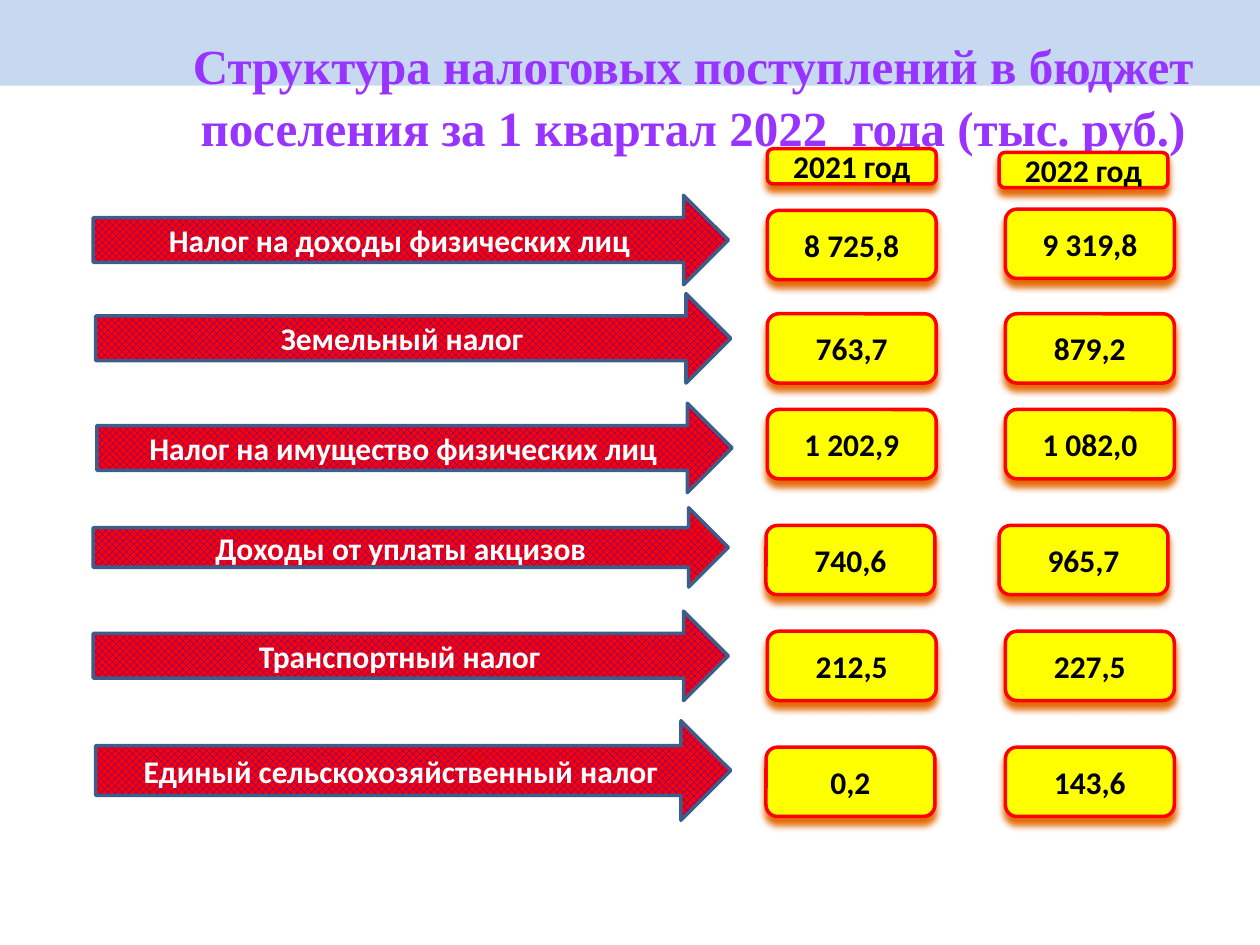
from lxml import etree
from pptx import Presentation
from pptx import util as u
from pptx.dml import color
from pptx.enum import dml, shapes, text
from pptx.oxml import ns

WIDE, HIGH = 10, 7.5
YEARS = [("2021 год", 6.09, 1.18), ("2022 год", 7.93, 1.21)]
BOX_W, BOX_H, HEAD_H = 1.34, 0.55, 0.28
ARROW_W = 5.04
ROWS = [
    ("Налог на доходы физических лиц", (0.74, 1.55, 0.71),
     ("8 725,8", 6.09, 1.67), ("9 319,8", 7.98, 1.66)),
    ("Земельный налог", (0.76, 2.33, 0.71),
     ("763,7", 6.09, 2.49), ("879,2", 7.98, 2.49)),
    ("Налог на имущество физических лиц", (0.77, 3.2, 0.71),
     ("1 202,9", 6.09, 3.25), ("1 082,0", 7.98, 3.25)),
    ("Доходы от уплаты акцизов", (0.74, 4.03, 0.63),
     ("740,6", 6.08, 4.17), ("965,7", 7.93, 4.17)),
    ("Транспортный налог", (0.74, 4.85, 0.71),
     ("212,5", 6.09, 5.01), ("227,5", 7.98, 5.01)),
    ("Единый сельскохозяйственный налог", (0.76, 5.72, 0.79),
     ("0,2", 6.08, 5.93), ("143,6", 7.98, 5.93)),
]


def tint(code):
    return color.RGBColor.from_string(code)


def write(shape, words, size, face, code):
    shape.text_frame.text = words
    shape.text_frame.word_wrap = True
    para = shape.text_frame.paragraphs[0]
    para.alignment = text.PP_ALIGN.CENTER
    font = para.font
    font.size, font.name, font.bold = u.Pt(size), face, True
    font.color.rgb = tint(code)
    return para


def block(slide, kind, x, y, w, h, line=None):
    shape = slide.shapes.add_shape(kind, *map(u.Inches, (x, y, w, h)))
    shape.shadow.inherit = False
    if line:
        shape.line.color.rgb = tint(line)
        shape.line.width = u.Pt(2)
    else:
        shape.line.fill.background()
    return shape


def paint(shape, code):
    shape.fill.solid()
    shape.fill.fore_color.rgb = tint(code)


def label(shape, words, code):
    write(shape, words, 18, "Calibri", code)
    shape.text_frame.vertical_anchor = text.MSO_ANCHOR.MIDDLE


def glow(shape, code):
    effects = shape.element.spPr.find(ns.qn("a:effectLst"))
    shadow = etree.SubElement(
        effects, ns.qn("a:outerShdw"), blurRad=str(u.Pt(4)),
        dist=str(u.Pt(4)), dir="5400000", rotWithShape="0")
    etree.SubElement(shadow, ns.qn("a:srgbClr"), val=code)


def arrow(slide, words, x, y, h):
    shape = block(slide, shapes.MSO_SHAPE.RIGHT_ARROW, x, y, ARROW_W, h, "3A5F8C")
    shape.fill.patterned()
    shape.fill.pattern = dml.MSO_PATTERN.OUTLINED_DIAMOND
    shape.fill.fore_color.rgb = tint("0000FF")
    shape.fill.back_color.rgb = tint("FF0000")
    label(shape, words, "FFFFFF")


def box(slide, words, x, y, h=BOX_H):
    shape = block(slide, shapes.MSO_SHAPE.ROUNDED_RECTANGLE, x, y, BOX_W, h, "FF0000")
    paint(shape, "FFFF00")
    glow(shape, "E46C0A")
    label(shape, words, "000000")


def head(slide):
    title = slide.shapes.title
    title.left, title.top = u.Inches(1), u.Inches(0.21)
    title.width, title.height = u.Inches(9), u.Inches(1.25)
    para = write(title, "Структура налоговых поступлений в бюджет "
                 "поселения за 1 квартал 2022  года (тыс. руб.)",
                 28, "Times New Roman", "9933FF")
    para.line_spacing = 1.05
    title.text_frame.vertical_anchor = text.MSO_ANCHOR.TOP
    band = block(slide, shapes.MSO_SHAPE.RECTANGLE, 0, 0, WIDE, 0.68)
    paint(band, "C6D9F1")
    title.element.addprevious(band.element)


def main():
    deck = Presentation()
    deck.slide_width, deck.slide_height = u.Inches(WIDE), u.Inches(HIGH)
    slide = deck.slides.add_slide(deck.slide_layouts[5])
    head(slide)
    for year in YEARS:
        box(slide, *year, HEAD_H)
    for tax, spot, *sums in ROWS:
        arrow(slide, tax, *spot)
        for item in sums:
            box(slide, *item)
    deck.save("out.pptx")


if __name__ == "__main__":
    main()
